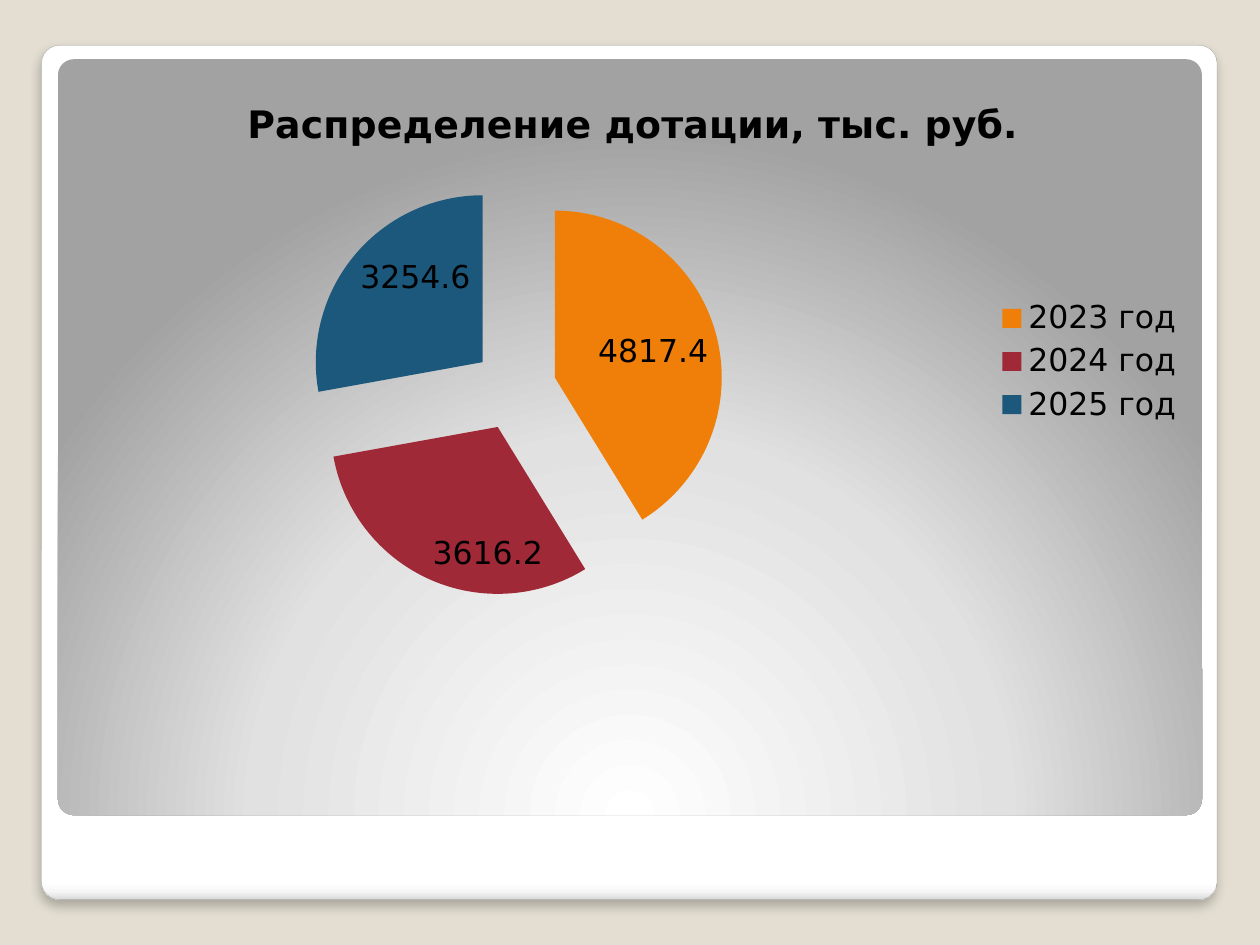
"""Build a slide with an exploded pie chart of subsidies by year."""
from lxml import etree
from pptx import Presentation
from pptx.chart.data import CategoryChartData
from pptx.dml.color import RGBColor
from pptx.enum.chart import XL_CHART_TYPE, XL_LABEL_POSITION, XL_LEGEND_POSITION
from pptx.enum.shapes import MSO_SHAPE
from pptx.oxml import parse_xml
from pptx.oxml.ns import nsdecls, qn
from pptx.util import Inches, Pt

FONT = "DejaVu Sans"
TITLE = "Распределение дотации, тыс. руб."


def rgb(color):
    return RGBColor.from_string(color)


def add_panel(s, box, stops, direction):
    sp = s.shapes.add_shape(MSO_SHAPE.ROUNDED_RECTANGLE, *map(Inches, box))
    sp.adjustments[0] = 0.021
    sp.shadow.inherit = False
    sp.line.fill.background()
    gs = "".join(
        f'<a:gs pos="{pos * 1000}"><a:srgbClr val="{color}"/></a:gs>' for pos, color in stops
    )
    grad = parse_xml(
        f'<a:gradFill {nsdecls("a")} rotWithShape="1"><a:gsLst>{gs}</a:gsLst>{direction}</a:gradFill>'
    )
    sp._element.spPr.find(qn("a:prstGeom")).addnext(grad)
    return sp


prs = Presentation()
prs.slide_width, prs.slide_height = Inches(10), Inches(7.5)
s = prs.slides.add_slide(prs.slide_layouts[6])
s.background.fill.solid()
s.background.fill.fore_color.rgb = rgb("E3DED1")

frame = add_panel(
    s,
    (0.33, 0.36, 9.33, 6.78),
    [(0, "FFFFFF"), (98, "FFFFFF"), (99, "F7F7F7"), (100, "DADADA")],
    '<a:lin ang="5400000" scaled="0"/>',
)
frame.line.color.rgb = rgb("A4A4A4")
frame.line.width = Pt(0.16)
shadow = parse_xml(
    f'<a:outerShdw {nsdecls("a")} blurRad="{Pt(6)}" dist="{Pt(4)}" dir="5400000" algn="t" rotWithShape="0">'
    '<a:srgbClr val="000000"><a:alpha val="25000"/></a:srgbClr></a:outerShdw>'
)
frame._element.spPr.find(qn("a:effectLst")).append(shadow)

add_panel(
    s,
    (0.46, 0.47, 9.08, 6),
    [(0, "FFFFFF"), (55, "E1E1E1"), (100, "A2A2A2")],
    '<a:path path="circle"><a:fillToRect l="50000" t="175000" r="50000" b="-75000"/></a:path>',
)

data = CategoryChartData()
data.categories = ["2023 год", "2024 год", "2025 год"]
data.add_series(TITLE, [4817.4, 3616.2, 3254.6])
box = [Inches(v) for v in (0.55, 0.58, 8.95, 4.58)]
chart = s.shapes.add_chart(XL_CHART_TYPE.PIE_EXPLODED, *box, data).chart
chart.font.name = FONT
chart.font.size = Pt(18)
chart.font.color.rgb = rgb("000000")

chart.has_title = True
r = chart.chart_title.text_frame.paragraphs[0].add_run()
r.text = TITLE
r.font.name = FONT
r.font.size = Pt(21.6)
r.font.bold = True
r.font.color.rgb = rgb("000000")

chart.has_legend = True
chart.legend.position = XL_LEGEND_POSITION.RIGHT
chart.legend.include_in_layout = False

plot = chart.plots[0]
plot.vary_by_categories = True
series = plot.series[0]
for i, color in enumerate(["F07F09", "9F2936", "1B587C"]):
    fill = series.points[i].format.fill
    fill.solid()
    fill.fore_color.rgb = rgb(color)
for explosion in series._element.findall(".//" + qn("c:explosion")):
    explosion.set("val", "25")
for point in series._element.findall(qn("c:dPt")):
    if point.find(qn("c:explosion")) is None:
        explosion = etree.Element(qn("c:explosion"), val="25")
        point.find(qn("c:spPr")).addprevious(explosion)

labels = series.data_labels
labels.show_value = True
labels.position = XL_LABEL_POSITION.INSIDE_END
labels.number_format = "General"
labels.number_format_is_linked = False

area = chart._chartSpace.chart.plotArea
for old in area.findall(qn("c:layout")):
    area.remove(old)
places = {"x": 0.21, "y": 0.185, "w": 0.37, "h": 0.725}
parts = "".join(f'<c:{key} val="{val}"/>' for key, val in places.items())
area.insert(0, parse_xml(
    f'<c:layout {nsdecls("c")}><c:manualLayout><c:layoutTarget val="inner"/>'
    f'<c:xMode val="edge"/><c:yMode val="edge"/>{parts}</c:manualLayout></c:layout>'
))

prs.save("out.pptx")
